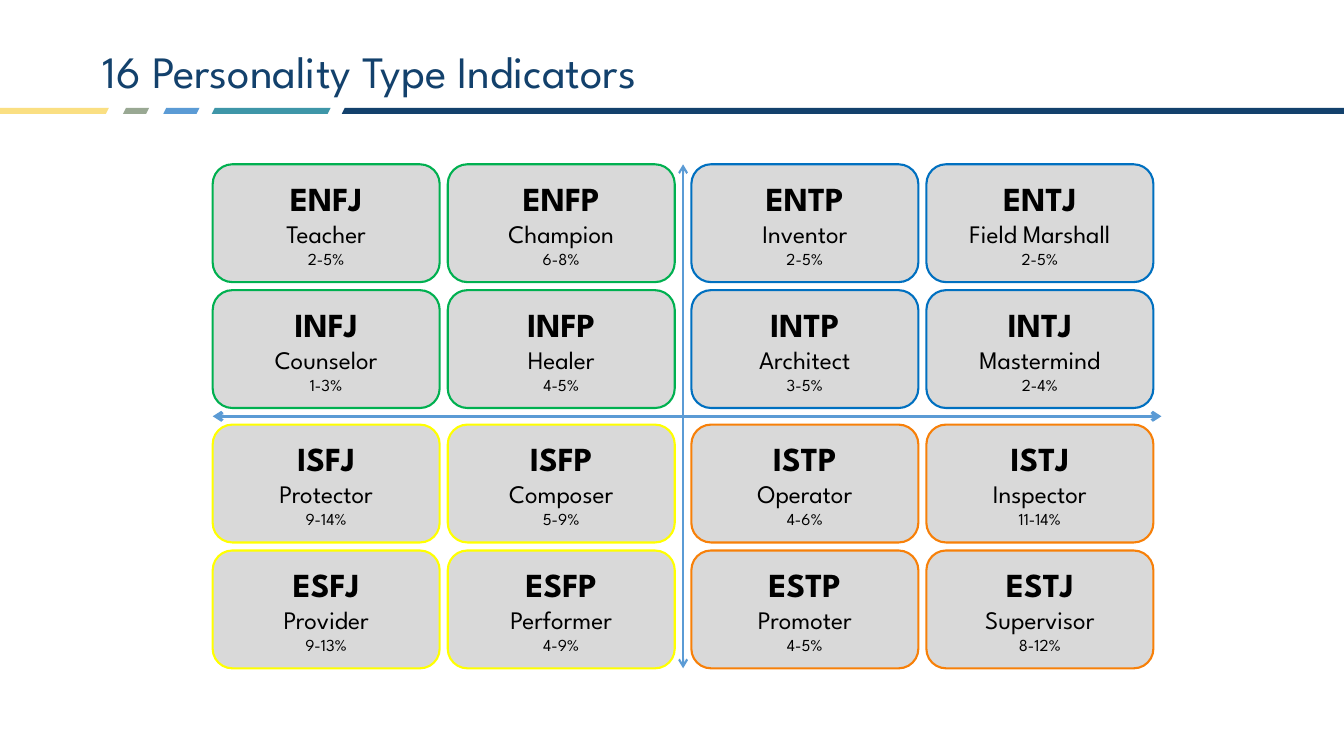
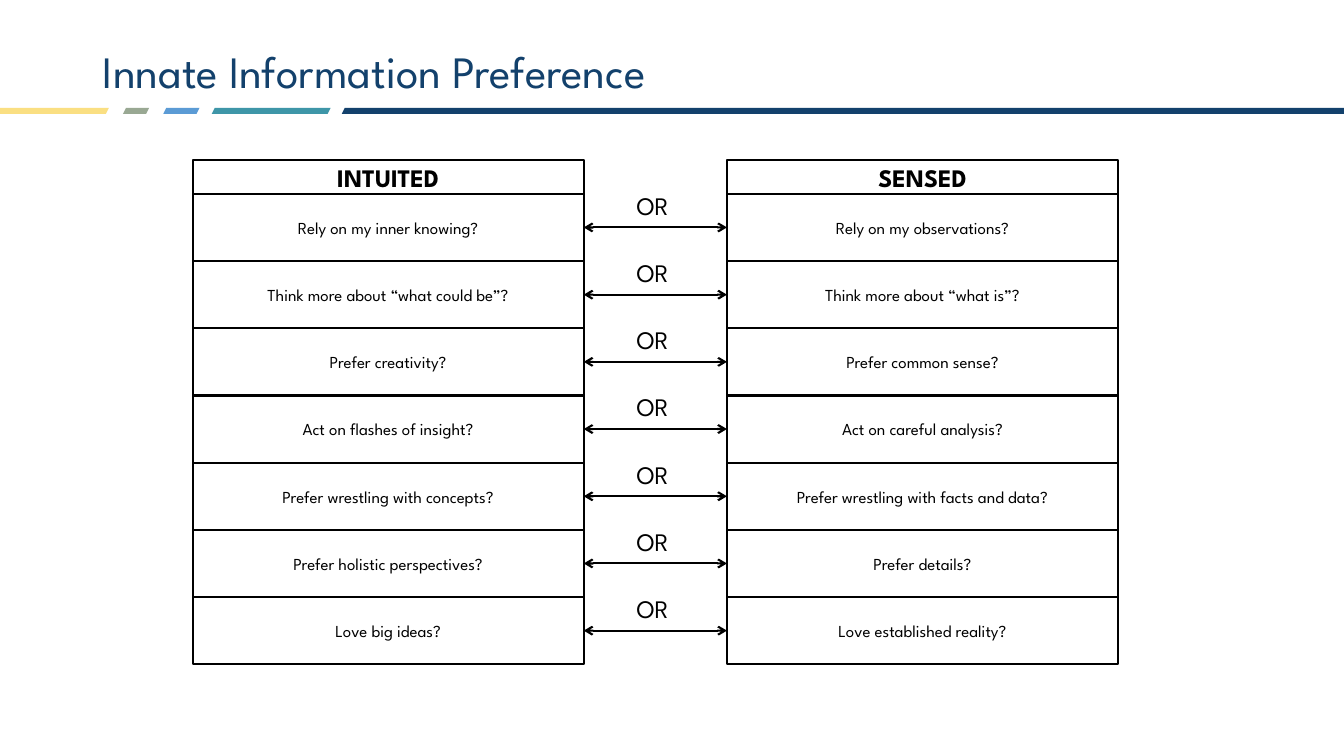
from collections import namedtuple

from lxml import etree
from pptx import Presentation
from pptx import util as u
from pptx.dml.color import RGBColor
from pptx.enum import shapes, text
from pptx.oxml.ns import qn

WIDTH, HEIGHT = 13.33, 7.5
FONT = "League Spartan"
NAVY, BLACK, GREY, SKY = "13416C", "000000", "D9D9D9", "5B9BD5"
GREEN, BLUE, YELLOW, ORANGE = "00B050", "0070C0", "FFFF00", "F78009"

Box = namedtuple("Box", "left top width height")
TITLE_BOX = Box(0.92, 0.4, 11.5, 0.67)
BAND_TOP, BAND_HEIGHT = 1.07, 0.06
BANDS = [
    (-0.04, 1.12, "FADF82"),
    (1.22, 0.26, "99A893"),
    (1.62, 0.36, SKY),
    (2.1, 1.18, "3E96A8"),
    (3.39, 9.98, NAVY),
]

QUADRANTS = [[GREEN, BLUE], [YELLOW, ORANGE]]
TYPES = [
    [("ENFJ", "Teacher", "2-5%"), ("ENFP", "Champion", "6-8%"),
     ("ENTP", "Inventor", "2-5%"), ("ENTJ", "Field Marshall", "2-5%")],
    [("INFJ", "Counselor", "1-3%"), ("INFP", "Healer", "4-5%"),
     ("INTP", "Architect", "3-5%"), ("INTJ", "Mastermind", "2-4%")],
    [("ISFJ", "Protector", "9-14%"), ("ISFP", "Composer", "5-9%"),
     ("ISTP", "Operator", "4-6%"), ("ISTJ", "Inspector", "11-14%")],
    [("ESFJ", "Provider", "9-13%"), ("ESFP", "Performer", "4-9%"),
     ("ESTP", "Promoter", "4-5%"), ("ESTJ", "Supervisor", "8-12%")],
]

HEADINGS = ("INTUITED", "SENSED")
CHOICES = [
    ("Rely on my inner knowing?", "Rely on my observations?"),
    ("Think more about “what could be”?", "Think more about “what is”?"),
    ("Prefer creativity?", "Prefer common sense?"),
    ("Act on flashes of insight?", "Act on careful analysis?"),
    ("Prefer wrestling with concepts?", "Prefer wrestling with facts and data?"),
    ("Prefer holistic perspectives?", "Prefer details?"),
    ("Love big ideas?", "Love established reality?"),
]


def color(value):
    """Turn a hex string into a colour."""
    return RGBColor.from_string(value)


def inches(box):
    """Turn the numbers of a box into lengths."""
    return [u.Inches(value) for value in box]


def add_span(para, words, size, tint=BLACK, bold=False):
    """Add one formatted run to a paragraph."""
    span = para.add_run()
    span.text = words
    span.font.name, span.font.size, span.font.bold = FONT, u.Pt(size), bold
    span.font.color.rgb = color(tint)


def add_panel(page, kind, box, fill=None, line=None, lines=()):
    """Add a preset shape with centred lines of (words, size, bold)."""
    panel = page.shapes.add_shape(kind, *inches(box))
    panel.shadow.inherit = False
    if fill:
        panel.fill.solid()
        panel.fill.fore_color.rgb = color(fill)
    else:
        panel.fill.background()
    if line:
        panel.line.color.rgb = color(line)
        panel.line.width = u.Pt(1.5)
    else:
        panel.line.fill.background()
    frame = panel.text_frame
    frame.vertical_anchor = text.MSO_ANCHOR.MIDDLE
    for index, (words, size, bold) in enumerate(lines):
        para = frame.add_paragraph() if index else frame.paragraphs[0]
        para.alignment = text.PP_ALIGN.CENTER
        add_span(para, words, size, bold=bold)
    return panel


def add_arrow(page, start, end, tint, weight):
    """Add a straight line with an open arrowhead at both ends."""
    arrow = page.shapes.add_connector(
        shapes.MSO_CONNECTOR.STRAIGHT, *inches(start + end))
    arrow.line.color.rgb = color(tint)
    arrow.line.width = u.Pt(weight)
    for tag in ("a:headEnd", "a:tailEnd"):
        etree.SubElement(arrow.line._get_or_add_ln(), qn(tag), type="arrow")
    etree.SubElement(arrow.element.spPr, qn("a:effectLst"))
    return arrow


def add_bands(page, layout):
    """Draw the coloured bands and hand them to the layout."""
    for left, width, tint in BANDS:
        band = add_panel(page, shapes.MSO_SHAPE.PARALLELOGRAM,
                         Box(left, BAND_TOP, width, BAND_HEIGHT), tint)
        band.adjustments[0] = 0.5
        layout.shapes.element.append(band.element)


def add_page(deck, layout, heading):
    """Add a slide and place its title."""
    page = deck.slides.add_slide(layout)
    title = page.shapes.title
    title.left, title.top, title.width, title.height = inches(TITLE_BOX)
    frame = title.text_frame
    frame.word_wrap = True
    frame.auto_size = text.MSO_AUTO_SIZE.NONE
    frame.vertical_anchor = text.MSO_ANCHOR.MIDDLE
    para = frame.paragraphs[0]
    para.alignment = text.PP_ALIGN.LEFT
    para.line_spacing = 0.9
    add_span(para, heading, 32, NAVY)
    return page


def draw_type_grid(page, box):
    """Draw four quadrants of type cards, parted by two arrows."""
    gap, aisle = 0.08, 0.165
    card_width = (box.width - 2 * gap - aisle) / 4
    card_height = (box.height - 2 * gap - aisle) / 4
    for row, cards in enumerate(TYPES):
        for column, (code, role, share) in enumerate(cards):
            left = box.left + column * (card_width + gap) + column // 2 * (aisle - gap)
            top = box.top + row * (card_height + gap) + row // 2 * (aisle - gap)
            add_panel(page, shapes.MSO_SHAPE.ROUNDED_RECTANGLE,
                      Box(left, top, card_width, card_height),
                      GREY, QUADRANTS[row // 2][column // 2],
                      [(code, 24, True), (role, 18, False), (share, 12, False)])
    middle_x, middle_y = box.left + box.width / 2, box.top + box.height / 2
    add_arrow(page, (middle_x, box.top), (middle_x, box.top + box.height), SKY, 1.5)
    add_arrow(page, (box.left, middle_y),
              (box.left + box.width + gap, middle_y), SKY, 2.25)


def add_or_label(page, center_x, line_y):
    """Write OR above the middle of an arrow."""
    width, height = 0.57, 0.4
    label = page.shapes.add_textbox(
        *inches((center_x - width / 2, line_y - 0.42, width, height)))
    label.text_frame.word_wrap = False
    label.text_frame.auto_size = text.MSO_AUTO_SIZE.SHAPE_TO_FIT_TEXT
    add_span(label.text_frame.paragraphs[0], "OR", 18)


def draw_choices(page, box):
    """Draw two columns of statements joined row by row with arrows."""
    unit = box.height / (2 * len(CHOICES) + 1)
    column_width = 3.88
    lefts = (box.left, box.left + box.width - column_width)

    def add_row(top, height, pair, size, bold):
        """Add one cell to each column."""
        return [add_panel(page, shapes.MSO_SHAPE.RECTANGLE,
                          Box(left, top, column_width, height),
                          line=BLACK, lines=[(words, size, bold)])
                for left, words in zip(lefts, pair)]

    add_row(box.top, unit, HEADINGS, 18, True)
    for index, pair in enumerate(CHOICES):
        top = box.top + unit * (2 * index + 1)
        first, second = add_row(top, 2 * unit, pair, 12, False)
        line_y = top + unit
        arrow = add_arrow(page, (lefts[0] + column_width, line_y),
                          (lefts[1], line_y), BLACK, 1.5)
        arrow.begin_connect(first, 3)
        arrow.end_connect(second, 1)
        add_or_label(page, box.left + box.width / 2, line_y)


def main():
    """Build and save the deck."""
    deck = Presentation()
    deck.slide_width, deck.slide_height = u.Inches(WIDTH), u.Inches(HEIGHT)
    layout = deck.slide_layouts.get_by_name("Title Only")
    types_page = add_page(deck, layout, "16 Personality Type Indicators")
    add_bands(types_page, layout)
    draw_type_grid(types_page, Box(2.11, 1.63, 9.33, 5))
    choices_page = add_page(deck, layout, "Innate Information Preference")
    draw_choices(choices_page, Box(1.91, 1.59, 9.18, 5))
    deck.save("out.pptx")


if __name__ == "__main__":
    main()
